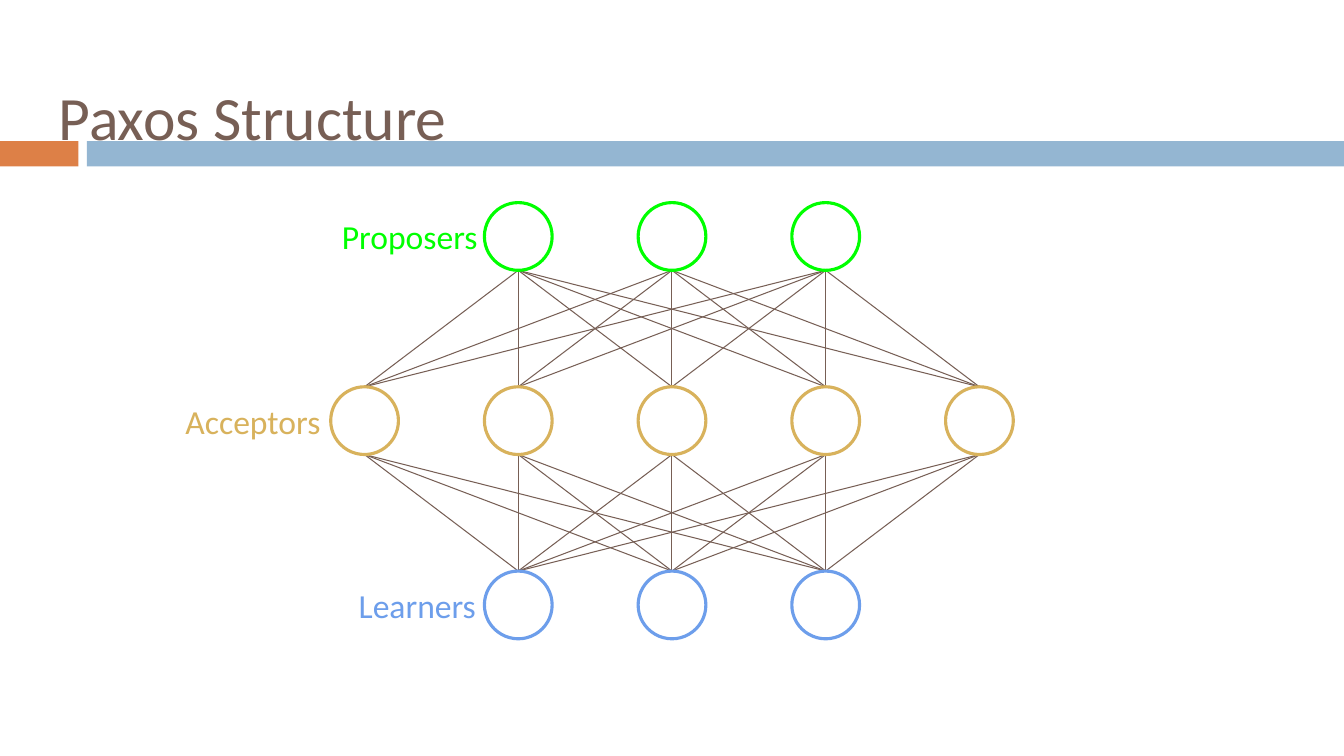
from itertools import product

from pptx import Presentation
from pptx.dml.color import RGBColor
from pptx.enum import shapes, text
from pptx.oxml import ns
from pptx.util import Pt
from lxml import etree

BROWN = RGBColor(0x77, 0x5F, 0x55)
ORANGE = RGBColor(0xDD, 0x80, 0x47)
STEEL = RGBColor(0x94, 0xB6, 0xD2)
GREEN = RGBColor(0x00, 0xFF, 0x00)
GOLD = RGBColor(0xD8, 0xB2, 0x5C)
BLUE = RGBColor(0x6D, 0x9E, 0xEB)

WIDTH, HEIGHT = 960, 540
DIAMETER = 48.4
COLUMN_GAP, ROW_GAP = 109.8, 131.6
FIRST_ROW = 144.7

# Name, number of nodes, colour, label left, label width
ROLES = [
    ("Proposers", 3, GREEN, 225.4, 134.6),
    ("Acceptors", 5, GOLD, 115.2, 131),
    ("Learners", 3, BLUE, 236.2, 123.8),
]


def write(box, words, *, size, color, font="Calibri", inset=9.4,
          align=text.PP_ALIGN.LEFT, anchor=text.MSO_ANCHOR.MIDDLE):
    frame = box.text_frame
    frame.word_wrap = True
    frame.auto_size = text.MSO_AUTO_SIZE.NONE
    frame.vertical_anchor = anchor
    frame.margin_left = frame.margin_right = Pt(inset)
    frame.margin_top = frame.margin_bottom = Pt(inset)
    para = frame.paragraphs[0]
    para.alignment = align
    span = para.add_run()
    span.text = words
    span.font.name = font
    span.font.size = Pt(size)
    span.font.color.rgb = color


class Page:
    """The current slide and the way its elements look."""

    def __init__(self, deck):
        self.slide = deck.slides.add_slide(deck.slide_layouts[5])
        self.shapes = self.slide.shapes

    def title(self, words, left, top, width, height):
        box = self.shapes.title
        box.left, box.top = Pt(left), Pt(top)
        box.width, box.height = Pt(width), Pt(height)
        write(box, words, size=44, color=BROWN, anchor=text.MSO_ANCHOR.TOP)

    def bar(self, left, width, color):
        box = self.shapes.add_shape(shapes.MSO_SHAPE.RECTANGLE,
                                    Pt(left), Pt(100.8), Pt(width), Pt(18))
        box.shadow.inherit = False
        box.fill.solid()
        box.fill.fore_color.rgb = color
        box.line.fill.background()

    def node(self, center, top, color):
        circle = self.shapes.add_shape(
            shapes.MSO_SHAPE.OVAL, Pt(center - DIAMETER / 2), Pt(top),
            Pt(DIAMETER), Pt(DIAMETER))
        circle.shadow.inherit = False
        circle.fill.background()
        circle.line.color.rgb = color
        circle.line.width = Pt(2.25)

    def link(self, start, end):
        line = self.shapes.add_connector(
            shapes.MSO_CONNECTOR.STRAIGHT, *map(Pt, start), *map(Pt, end))
        line.line.color.rgb = BROWN
        line.line.width = Pt(0.75)
        etree.SubElement(line._element.spPr, ns.qn("a:effectLst"))

    def label(self, words, left, top, width, color):
        box = self.shapes.add_textbox(Pt(left), Pt(top), Pt(width), Pt(DIAMETER))
        write(box, words, size=24, color=color, align=text.PP_ALIGN.CENTER)


def centers(count):
    return [WIDTH / 2 + (i - (count - 1) / 2) * COLUMN_GAP for i in range(count)]


def main():
    deck = Presentation()
    deck.slide_width, deck.slide_height = Pt(WIDTH), Pt(HEIGHT)
    page = Page(deck)

    # Heading
    page.title("Paxos Structure", 32.4, 46.8, 894.2, 60.5)
    page.bar(0, 56, ORANGE)
    page.bar(62, WIDTH - 62, STEEL)

    # Links from every node to every node of the next row
    tops = [FIRST_ROW + row * ROW_GAP for row in range(len(ROLES))]
    columns = [centers(role[1]) for role in ROLES]
    for row in range(len(ROLES) - 1):
        for upper, lower in product(columns[row], columns[row + 1]):
            page.link((upper, tops[row] + DIAMETER), (lower, tops[row + 1]))

    # Nodes and role names
    for (name, _, color, left, width), top, row in zip(ROLES, tops, columns):
        for center in row:
            page.node(center, top, color)
        page.label(name, left, top, width, color)

    deck.save("out.pptx")


if __name__ == "__main__":
    main()
